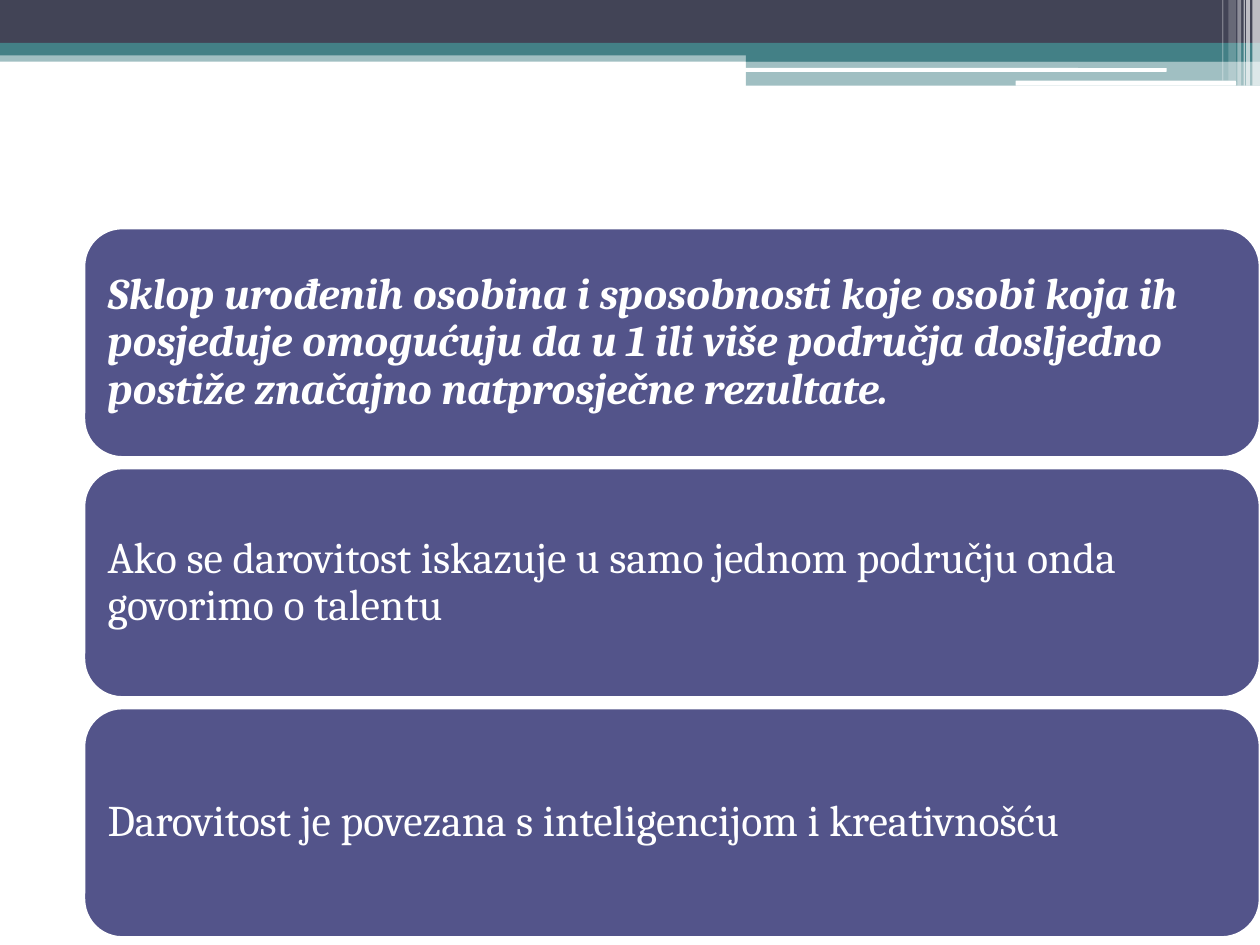
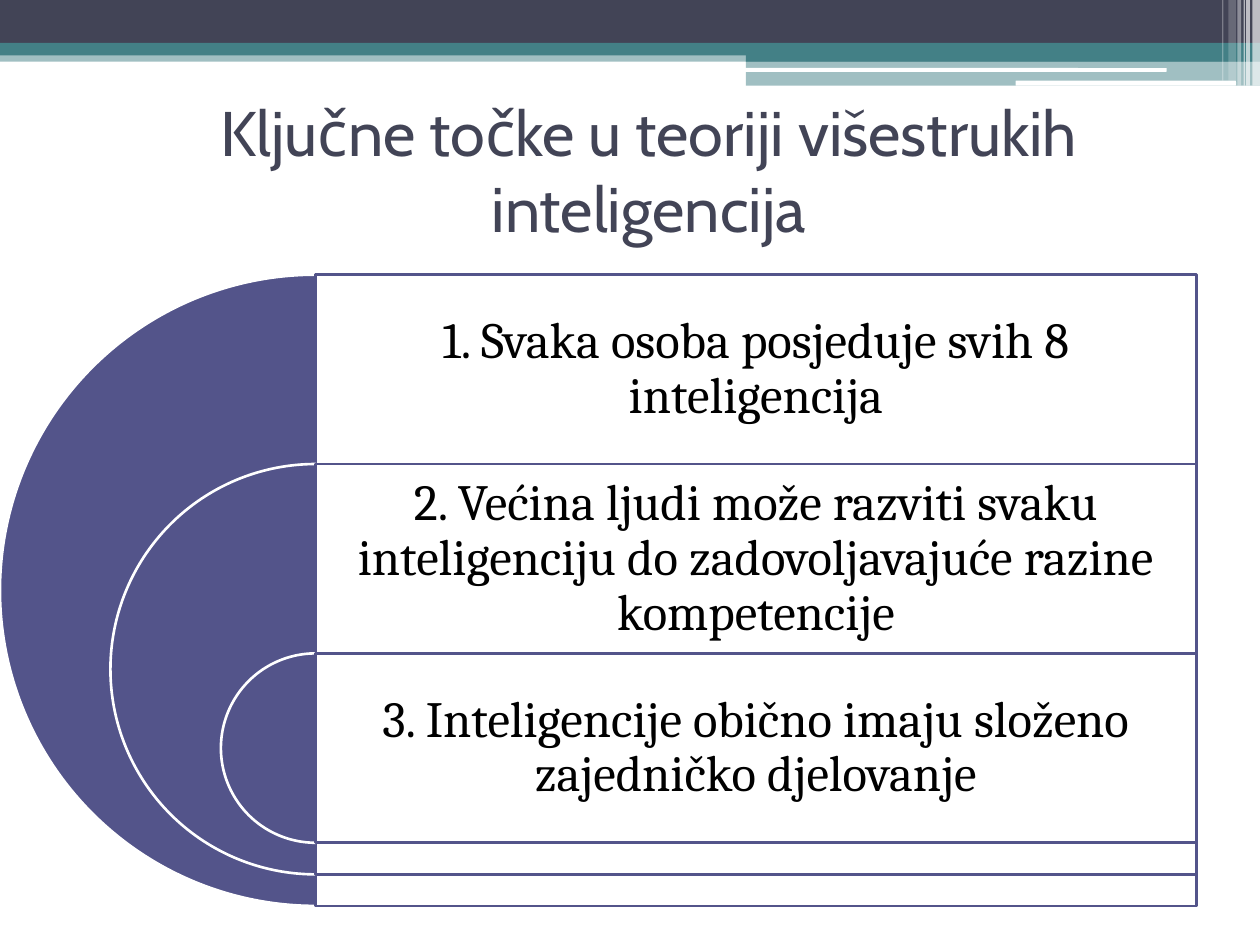
from pptx import Presentation, util as u
from pptx.dml.color import RGBColor
from pptx.enum import shapes, text
from pptx.oxml.ns import qn
from lxml import etree

CARDS = [
    ("Sklop urođenih osobina i sposobnosti koje osobi koja ih posjeduje omogućuju "
     "da u 1 ili više područja dosljedno postiže značajno natprosječne rezultate.", True),
    ("Ako se darovitost iskazuje u samo jednom području onda govorimo o talentu", False),
    ("Darovitost je povezana s inteligencijom i kreativnošću", False),
]
TITLE = "Ključne točke u teoriji višestrukih inteligencija"
POINTS = [
    "1. Svaka osoba posjeduje svih 8 inteligencija",
    "2. Većina ljudi može razviti svaku inteligenciju do zadovoljavajuće razine kompetencije",
    "3. Inteligencije obično imaju složeno zajedničko djelovanje",
]

THEME = dict(
    dark="424456", teal="438086", plum="53548A", white="FFFFFF", black="000000",
    head="Cabin", body="Cambria", title=36, card=25, point=29, line=1.5,
)
W, H = 10, 7.5
SPLIT = 5.92
BANDS = [
    (0, 0.4, W, 0.09, "teal", 50),
    (0, 0, W, 0.34, "dark", 100),
    (0, 0.34, W, 0.1, "teal", 100),
    (SPLIT, 0.39, W - SPLIT, 0.1, "teal", 100),
    (SPLIT, 0.48, W - SPLIT, 0.2, "teal", 50),
]
RULES = [(5.91, 0.54, 3.35, 0.03), (8.06, 0.64, 1.75, 0.04)]
STRIPES = [
    (9.94, 0.06, 0.68, 65), (9.89, 0.03, 0.68, 65), (9.87, 0.01, 0.68, 60),
    (9.82, 0.03, 0.68, 40), (9.75, 0.06, 0.64, 20), (9.7, 0.01, 0.64, 30),
]
KIND = shapes.MSO_SHAPE


def tint(name):
    return RGBColor.from_string(THEME[name])


def draw(slide, kind, box, fill, alpha=100, line=None, adj=()):
    shape = slide.shapes.add_shape(kind, *map(u.Inches, box))
    shape.shadow.inherit = False
    shape.fill.solid()
    shape.fill.fore_color.rgb = tint(fill)
    if alpha < 100:
        color = shape.fill._xPr.find(qn("a:solidFill"))[0]
        etree.SubElement(color, qn("a:alpha"), val=str(alpha * 1000))
    if line:
        shape.line.color.rgb = tint(line)
        shape.line.width = u.Pt(THEME["line"])
    else:
        shape.line.fill.background()
    for i, value in enumerate(adj):
        shape.adjustments[i] = value
    return shape


def write(shape, words, size, color, font="body", align="CENTER", pad=(0.1, 0.05),
          space=None, strong=False):
    frame = shape.text_frame
    frame.word_wrap = True
    frame.vertical_anchor = text.MSO_ANCHOR.MIDDLE
    frame.margin_left = frame.margin_right = u.Inches(pad[0])
    frame.margin_top = frame.margin_bottom = u.Inches(pad[1])
    para = frame.paragraphs[0]
    para.alignment = text.PP_ALIGN[align]
    para.line_spacing = space
    run = para.add_run()
    run.text = words
    run.font.name = THEME[font]
    run.font.size = u.Pt(THEME[size])
    run.font.color.rgb = tint(color)
    run.font.bold = run.font.italic = strong


def label(slide, box, words, **style):
    write(slide.shapes.add_textbox(*map(u.Inches, box)), words, **style)


def page(deck):
    slide = deck.slides.add_slide(deck.slide_layouts[6])
    for *box, fill, alpha in BANDS:
        draw(slide, KIND.RECTANGLE, box, fill, alpha)
    for box in RULES:
        draw(slide, KIND.ROUNDED_RECTANGLE, box, "white")
    for left, wide, tall, alpha in STRIPES:
        draw(slide, KIND.RECTANGLE, (left, 0, wide, tall), "white", alpha)
    return slide


def cards(deck):
    slide = page(deck)
    left, top, tall, gap = W / 15, 1.81, 1.82, 0.085
    for i, (words, strong) in enumerate(CARDS):
        box = (left, top + i * (tall + gap), W - left, tall)
        card = draw(slide, KIND.ROUNDED_RECTANGLE, box, "plum", line="white")
        write(card, words, size="card", color="white", align="LEFT",
              pad=(0.1, 0.1), space=0.9, strong=strong)


def points(deck):
    slide = page(deck)
    label(slide, (0.65, 0.76, 9, 1.17), TITLE, size="title", color="dark", font="head")
    top, full = 2.18, 5.01
    mid, wide = full / 2, 6.99
    row = 0.3 * full
    shrink = 0.35 * full
    for i, words in enumerate(POINTS):
        y, size = top + i * row, full - i * shrink
        draw(slide, KIND.PIE, (mid - size / 2, y, size, size), "plum",
             line="white", adj=(54, 162))
        draw(slide, KIND.RECTANGLE, (mid, y, wide, size), "white", 90, line="plum")
        label(slide, (mid, y, wide, row), words, size="point", color="black",
              pad=(0.12, 0.12), space=0.9)


def main():
    deck = Presentation()
    deck.slide_width, deck.slide_height = u.Inches(W), u.Inches(H)
    cards(deck)
    points(deck)
    deck.save("out.pptx")


if __name__ == "__main__":
    main()
